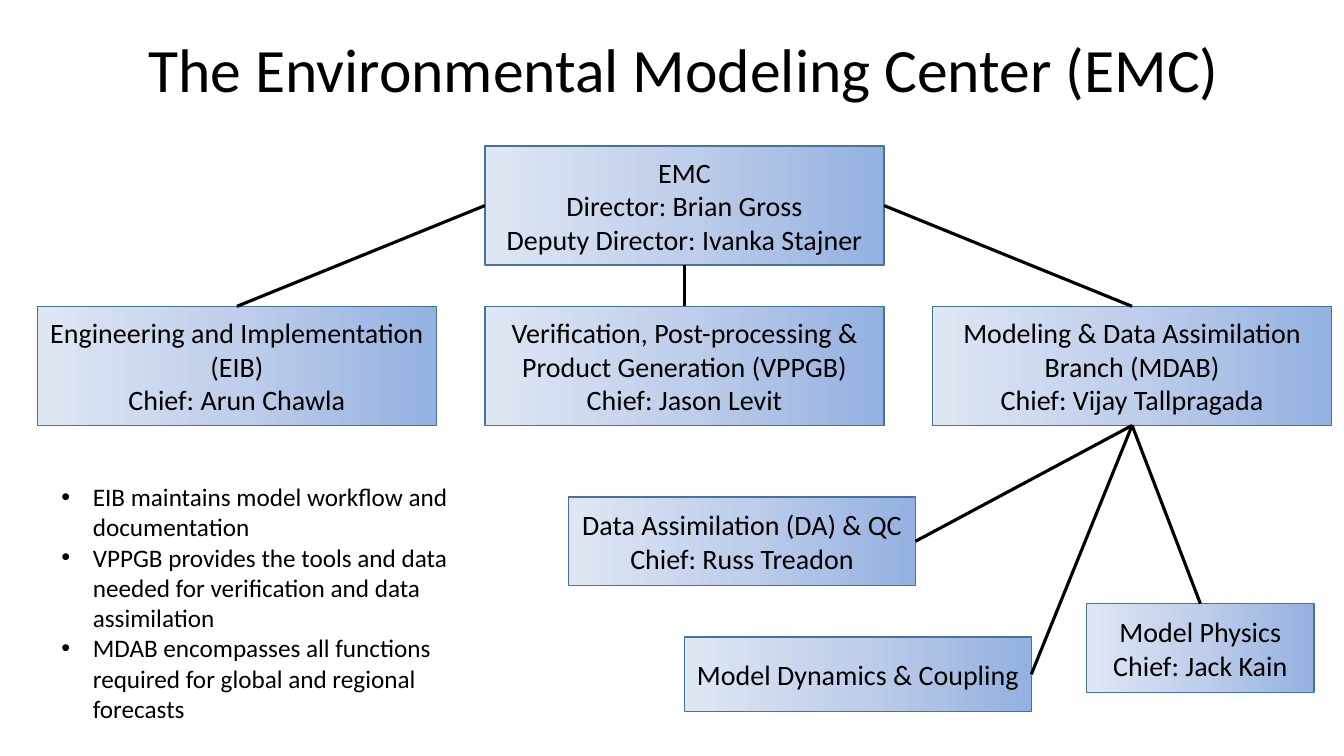
from copy import deepcopy
from dataclasses import dataclass

from lxml import etree
from pptx import Presentation
from pptx import util as u
from pptx.dml.color import RGBColor
from pptx.enum import shapes, text
from pptx.oxml.ns import qn


@dataclass
class Theme:
    font: str = "Calibri"
    ink: str = "000000"
    box_line: str = "43739E"
    box_gradient: tuple = ("94B1E1", "BFCEEA", "E0E7F4")
    title_size: int = 44
    box_size: int = 20
    bullet_size: int = 18


theme = Theme()


def write(shape, lines, size, align, anchor):
    """Fill a shape with one paragraph per line."""
    frame = shape.text_frame
    frame.word_wrap = True
    frame.vertical_anchor = anchor
    frame.text = "\n".join(lines)
    for paragraph in frame.paragraphs:
        paragraph.alignment = align
        paragraph.font.name = theme.font
        paragraph.font.size = u.Pt(size)
        paragraph.font.color.rgb = RGBColor.from_string(theme.ink)
    return frame


def add_box(left, top, width, height, lines):
    """Add a gradient box of the organization chart."""
    box = slide.shapes.add_shape(
        shapes.MSO_SHAPE.RECTANGLE, u.Cm(left), u.Cm(top), u.Cm(width), u.Cm(height))
    box.shadow.inherit = False
    box.line.color.rgb = RGBColor.from_string(theme.box_line)
    box.line.width = u.Pt(1)
    box.fill.gradient()
    box.fill.gradient_angle = 180
    stop_list = box._element.spPr.find(".//" + qn("a:gsLst"))
    stop_list.insert(1, deepcopy(stop_list[0]))
    for index, stop in enumerate(box.fill.gradient_stops):
        stop.position = index / 2
        stop.color.rgb = RGBColor.from_string(theme.box_gradient[index])
    write(box, lines, theme.box_size, text.PP_ALIGN.CENTER, text.MSO_ANCHOR.MIDDLE)
    return box


presentation = Presentation()
presentation.slide_width = u.Cm(33.87)
presentation.slide_height = u.Cm(19.05)
slide = presentation.slides.add_slide(presentation.slide_layouts[6])

# Title
title = slide.shapes.add_textbox(u.Cm(2.64), u.Cm(0), u.Cm(29.21), u.Cm(3.68))
title_frame = write(title, ["The Environmental Modeling Center (EMC)"],
                    theme.title_size, text.PP_ALIGN.CENTER, text.MSO_ANCHOR.MIDDLE)
title_frame.paragraphs[0].line_spacing = 0.9

# Director and the three branches below, on a three-column grid
column_left, column_step = 0.94, 11.28
box_width, box_height = 10.06, 3
director = add_box(column_left + column_step, 3.68, box_width, box_height, [
    "EMC", "Director: Brian Gross", "Deputy Director: Ivanka Stajner"])
branch_texts = [
    ["Engineering and Implementation (EIB)", "Chief: Arun Chawla"],
    ["Verification, Post-processing & Product Generation (VPPGB)", "Chief: Jason Levit"],
    ["Modeling & Data Assimilation Branch (MDAB)", "Chief: Vijay Tallpragada"],
]
engineering, verification, modeling = [
    add_box(column_left + column * column_step, 7.72, box_width, box_height, lines)
    for column, lines in enumerate(branch_texts)]

# Groups of the modeling branch
assimilation = add_box(14.33, 12.52, 8.74, 2.24,
                       ["Data Assimilation (DA) & QC", "Chief: Russ Treadon"])
dynamics = add_box(17.25, 16.05, 8.74, 1.88, ["Model Dynamics & Coupling"])
physics = add_box(27.38, 15.21, 5.74, 2.24, ["Model Physics", "Chief: Jack Kain"])

# Connectors, glued to the sides of the boxes
TOP, LEFT, BOTTOM, RIGHT = range(4)
links = [
    (director, LEFT, engineering, TOP),
    (director, RIGHT, modeling, TOP),
    (director, BOTTOM, verification, TOP),
    (modeling, BOTTOM, assimilation, RIGHT),
    (modeling, BOTTOM, dynamics, RIGHT),
    (modeling, BOTTOM, physics, TOP),
]
for upper, upper_side, lower, lower_side in links:
    connector = slide.shapes.add_connector(shapes.MSO_CONNECTOR.STRAIGHT, 0, 0, 0, 0)
    connector.begin_connect(upper, upper_side)
    connector.end_connect(lower, lower_side)
    connector.line.color.rgb = RGBColor.from_string(theme.ink)
    connector.line.width = u.Pt(2.25)
    etree.SubElement(connector._element.spPr, qn("a:effectLst"))

# Bulleted list on the branches
branch_list = slide.shapes.add_textbox(u.Cm(1.3), u.Cm(12.01), u.Cm(11.28), u.Cm(6.4))
list_frame = write(branch_list, [
    "EIB maintains model workflow and documentation",
    "VPPGB provides the tools and data needed for verification and data assimilation",
    "MDAB encompasses all functions required for global and regional forecasts",
], theme.bullet_size, text.PP_ALIGN.LEFT, text.MSO_ANCHOR.TOP)
indent = u.Cm(0.79)
for paragraph in list_frame.paragraphs:
    properties = paragraph._p.get_or_add_pPr()
    properties.set("marL", str(indent))
    properties.set("indent", str(-indent))
    bullet_font = etree.Element(qn("a:buFont"), typeface="Arial")
    bullet = etree.Element(qn("a:buChar"), char="•")
    properties.insert(0, bullet_font)
    properties.insert(1, bullet)

presentation.save("out.pptx")
